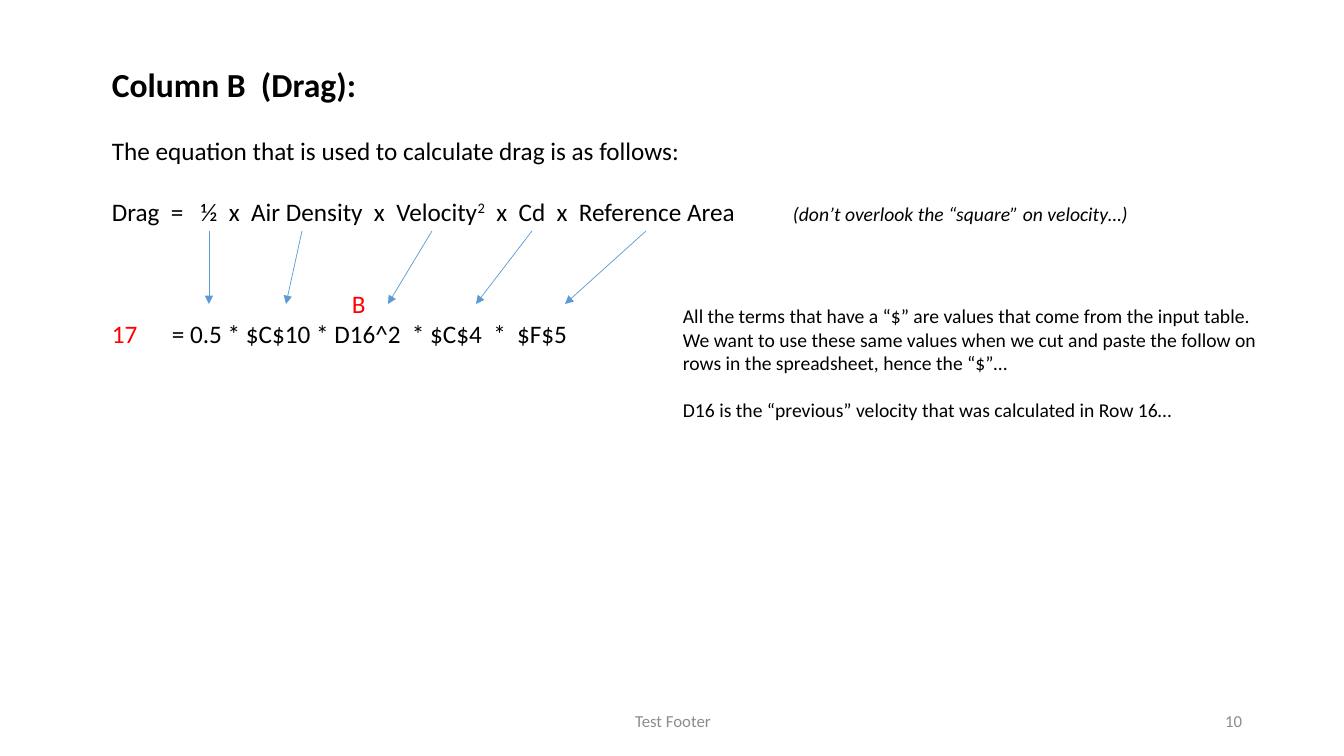
"""Build the slide that maps the drag equation onto its spreadsheet formula."""
from lxml import etree
from pptx import Presentation
from pptx import util as u
from pptx.dml.color import RGBColor
from pptx.enum import shapes, text
from pptx.oxml import ns

PX = 914400 / 100.8
BLACK = RGBColor(0x00, 0x00, 0x00)
RED = RGBColor(0xFF, 0x00, 0x00)
GRAY = RGBColor(0x8C, 0x8C, 0x8C)
BLUE = RGBColor(0x5B, 0x9B, 0xD5)


def px(length):
    return u.Emu(round(length * PX))


def add_span(para, words, size=18, color=BLACK, bold=False, italic=False, raised=False):
    span = para.add_run()
    span.text = words
    span.font.name = "Calibri"
    span.font.size = u.Pt(size)
    span.font.color.rgb = color
    span.font.bold = bold
    span.font.italic = italic
    if raised:
        span._r.get_or_add_rPr().set("baseline", "30000")


deck = Presentation()
deck.slide_width = u.Inches(13.333)
deck.slide_height = u.Inches(7.5)
page = deck.slides.add_slide(deck.slide_layouts[6])

equation_lines = [
    (0, 0, [("Column B  (Drag):", {"size": 24, "bold": True})]),
    (22, 0, [("The equation that is used to calculate drag is as follows:", {})]),
    (22, 681, [
        ("Drag  =   ½  x  Air Density  x  Velocity", {}),
        ("2", {"raised": True}),
        ("  x  Cd  x  Reference Area\t", {}),
        ("(don’t overlook the “square” on velocity…)", {"size": 14, "italic": True}),
    ]),
    (44, 240, [("\tB", {"color": RED})]),
    (0, 60, [
        ("17", {"color": RED}),
        ("\t= 0.5 * $C$10 * D16^2  * $C$4  *  $F$5", {}),
    ]),
]
note_lines = [
    (0, 0, [("All the terms that have a “$” are values that come from the input table.  "
             "We want to use these same values when we cut and paste the follow on "
             "rows in the spreadsheet, hence the “$”…", {"size": 14})]),
    (17, 0, [("D16 is the “previous” velocity that was calculated in Row 16…", {"size": 14})]),
]
footer_lines = [(0, 0, [("Test Footer", {"size": 12, "color": GRAY})])]
number_lines = [(0, 0, [("10", {"size": 12, "color": GRAY})])]

TOP, MIDDLE = text.MSO_ANCHOR.TOP, text.MSO_ANCHOR.MIDDLE
LEFT, CENTER, RIGHT = text.PP_ALIGN.LEFT, text.PP_ALIGN.CENTER, text.PP_ALIGN.RIGHT
text_blocks = [
    ((102, 59, 1109, 417), TOP, LEFT, equation_lines),
    ((673, 299, 606, 129), TOP, LEFT, note_lines),
    ((446, 701, 454, 40), MIDDLE, CENTER, footer_lines),
    ((950, 701, 302, 40), MIDDLE, RIGHT, number_lines),
]
for place, anchor, align, lines in text_blocks:
    box = page.shapes.add_textbox(*map(px, place))
    frame = box.text_frame
    frame.word_wrap = True
    frame.vertical_anchor = anchor
    for index, (space, tab, spans) in enumerate(lines):
        para = frame.add_paragraph() if index else frame.paragraphs[0]
        para.alignment = align
        para.space_before = u.Pt(space)
        if tab:
            stops = etree.SubElement(para._p.get_or_add_pPr(), ns.qn("a:tabLst"))
            etree.SubElement(stops, ns.qn("a:tab"), pos=str(px(tab)), algn="l")
        for words, style in spans:
            add_span(para, words, **style)

ARROW_TOP, ARROW_BOTTOM = 231, 304
for start, end in [(209, 209), (302, 286), (432, 388), (532, 476), (646, 565)]:
    arrow = page.shapes.add_connector(
        shapes.MSO_CONNECTOR.STRAIGHT, px(start), px(ARROW_TOP), px(end), px(ARROW_BOTTOM))
    arrow.line.color.rgb = BLUE
    arrow.line.width = u.Pt(0.5)
    etree.SubElement(arrow.line._get_or_add_ln(), ns.qn("a:tailEnd"), type="triangle")
    etree.SubElement(arrow._element.spPr, ns.qn("a:effectLst"))

deck.save("out.pptx")
